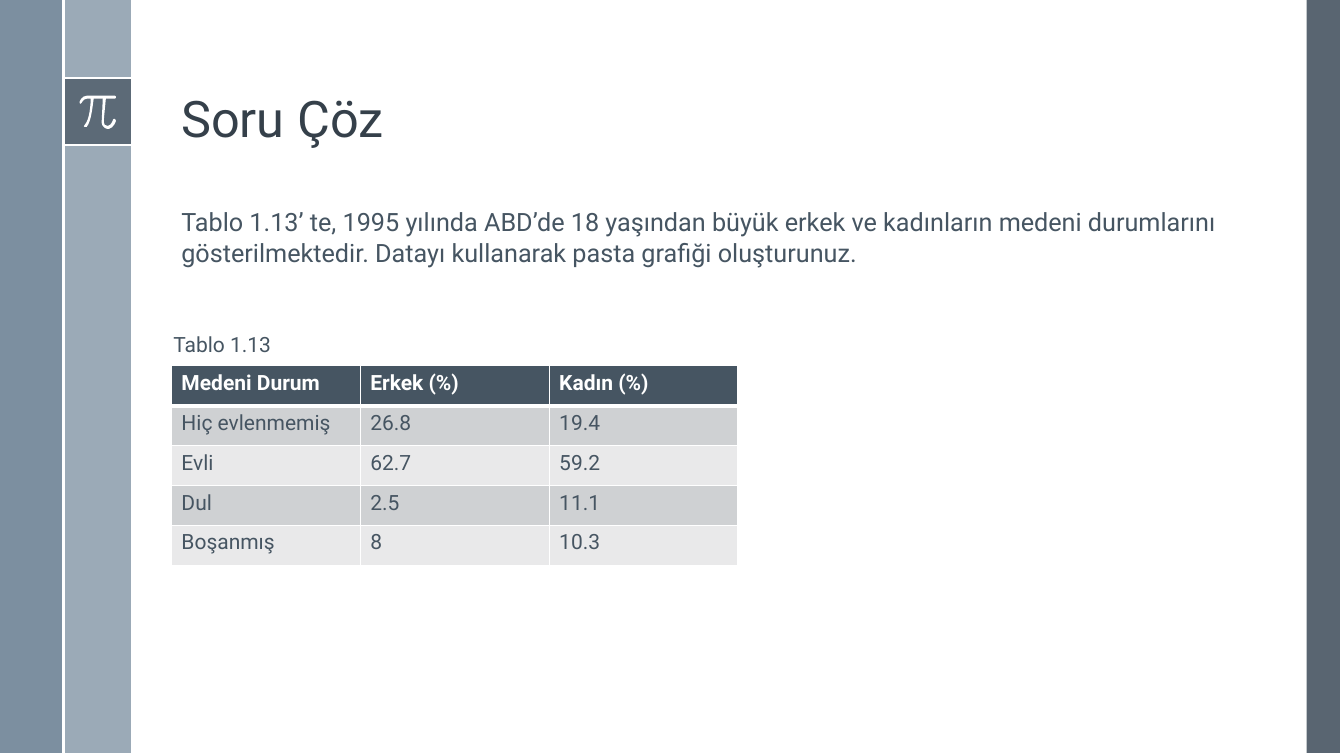
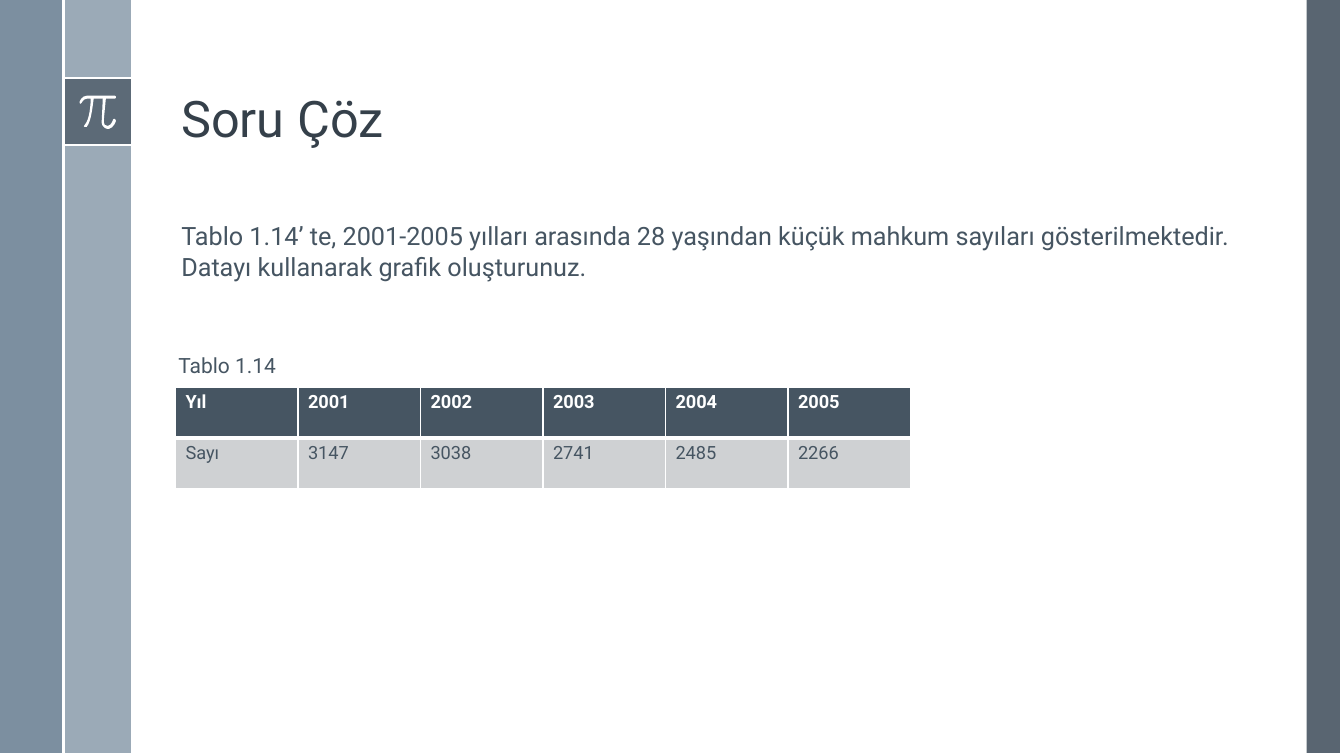
import pptx
import pptx.util
import pptx.dml.color
import pptx.enum.shapes
import pptx.enum.text
import pptx.oxml
import pptx.oxml.ns

Inches = pptx.util.Inches
Pt = pptx.util.Pt

COLORS = {
    "white": "FFFFFF",
    "title": "35404A",
    "text": "465562",
    "dark": "475562",
    "light_band": "9BAAB7",
    "blue_band": "6A8093",
    "odd_row": "CFD1D3",
    "even_row": "E9E9EA",
}
FONT = "Roboto"
NS = pptx.oxml.ns.nsdecls("a")
TOP, HEIGHT = -0.03, 7.5
BAND_X, BAND_W = 0.63, 0.67
BADGE_Y = 0.77

# Pi outline in hundredths of an inch: 2 numbers = line, 6 = Bezier curve
PI_START = (35, 0)
PI_PATH = [
    (7, 0), (2, 0, 0, 6, 0, 6), (0, 7, 0, 8, 1, 8), (2, 8, 2, 7, 2, 7),
    (2, 7, 4, 3, 7, 3), (11, 3), (11, 8, 10, 24, 5, 29),
    (4, 30, 4, 31, 5, 31), (7, 31), (12, 25, 13, 8, 14, 3), (23, 3),
    (22, 24), (22, 24, 21, 29, 24, 31), (25, 32, 26, 33, 28, 33), (29, 33),
    (34, 32, 36, 25, 36, 25), (36, 24, 35, 23, 35, 23),
    (34, 23, 33, 23, 33, 24), (33, 24, 32, 29, 28, 30),
    (27, 30, 26, 30, 25, 29), (24, 28, 24, 25, 24, 24), (26, 3), (35, 3),
    (36, 3, 36, 3, 36, 2), (36, 1, 36, 0, 35, 0),
]


def rgb(name):
    return pptx.dml.color.RGBColor.from_string(COLORS[name])


def set_fill(sp, color, alpha=100):
    sp.shadow.inherit = False
    sp.fill.solid()
    sp.fill.fore_color.rgb = rgb(color)
    sp.line.fill.background()
    if alpha < 100:
        clr = sp._element.spPr.find(".//" + pptx.oxml.ns.qn("a:srgbClr"))
        clr.append(pptx.oxml.parse_xml(f'<a:alpha {NS} val="{alpha * 1000}"/>'))


def add_band(s, x, y, w, h, color, alpha=100):
    sp = s.shapes.add_shape(pptx.enum.shapes.MSO_SHAPE.RECTANGLE,
                            Inches(x), Inches(y), Inches(w), Inches(h))
    set_fill(sp, color, alpha)


def add_rule(s, x1, y1, x2, y2):
    line = s.shapes.add_connector(pptx.enum.shapes.MSO_CONNECTOR.STRAIGHT,
                                  Inches(x1), Inches(y1), Inches(x2), Inches(y2))
    line.line.color.rgb = rgb("white")
    line.line.width = Pt(1.5)
    line._element.spPr.append(pptx.oxml.parse_xml(f'<a:effectLst {NS}/>'))


def add_pi(s, x, y):
    ends = [(Inches(x + px / 100), Inches(y + py / 100))
            for *_, px, py in [PI_START] + PI_PATH]
    builder = s.shapes.build_freeform(*ends[0])
    builder.add_line_segments(ends[1:], close=True)
    sp = builder.convert_to_shape()
    set_fill(sp, "white")
    # Bend the segments that are curves
    segments = list(sp._element.iter(pptx.oxml.ns.qn("a:lnTo")))
    for segment, step in zip(segments, PI_PATH):
        if len(step) == 6:
            pts = "".join(f'<a:pt x="{Inches(px / 100)}" y="{Inches(py / 100)}"/>'
                          for px, py in zip(step[::2], step[1::2]))
            segment.getparent().replace(segment, pptx.oxml.parse_xml(
                f'<a:cubicBezTo {NS}>{pts}</a:cubicBezTo>'))


def style(p, size, color, bold=False):
    p.font.name = FONT
    p.font.size = Pt(size)
    p.font.bold = bold
    p.font.color.rgb = rgb(color)


def add_text(s, x, y, w, h, text, size, color="text"):
    tf = s.shapes.add_textbox(Inches(x), Inches(y), Inches(w), Inches(h)).text_frame
    tf.word_wrap = True
    p = tf.paragraphs[0]
    p.text = text
    style(p, size, color)
    return tf


def add_frame(s):
    # Side bands
    add_band(s, 12.96, TOP, 0.33, HEIGHT, "dark", 90)
    add_band(s, BAND_X, TOP, BAND_W, HEIGHT, "light_band")
    add_band(s, -0.04, TOP, BAND_W, HEIGHT, "blue_band", 88)
    # Badge with the pi sign
    add_band(s, BAND_X, BADGE_Y, BAND_W, BAND_W, "dark", 75)
    for y in (BADGE_Y, BADGE_Y + BAND_W):
        add_rule(s, BAND_X, y, BAND_X + BAND_W, y)
    add_pi(s, BAND_X + 0.16, BADGE_Y + 0.18)
    add_rule(s, BAND_X, TOP, BAND_X, TOP + HEIGHT)


def add_title(s, text):
    tf = add_text(s, 1.7, 0.16, 10.7, 1.36, text, 36, "title")
    tf.vertical_anchor = pptx.enum.text.MSO_ANCHOR.BOTTOM
    tf.paragraphs[0].line_spacing = 0.9


def set_borders(cell, top, bottom):
    tcPr = cell._tc.get_or_add_tcPr()
    for side, width in (("L", 1), ("R", 1), ("T", top), ("B", bottom)):
        tcPr.append(pptx.oxml.parse_xml(
            f'<a:ln{side} {NS} w="{Pt(width)}"><a:solidFill>'
            f'<a:srgbClr val="{COLORS["white"]}"/></a:solidFill></a:ln{side}>'))


def add_data_table(s, x, y, w, h, rows, size):
    n_rows, n_cols = len(rows), len(rows[0])
    table = s.shapes.add_table(n_rows, n_cols, Inches(x), Inches(y),
                               Inches(w), Inches(h)).table
    for col in table.columns:
        col.width = Inches(w / n_cols)
    for i, values in enumerate(rows):
        table.rows[i].height = Inches(h / n_rows)
        header = i == 0
        fill = "text" if header else ("odd_row" if i % 2 else "even_row")
        for j, value in enumerate(values):
            cell = table.cell(i, j)
            set_borders(cell, 3 if i == 1 else 1, 3 if header else 1)
            cell.fill.solid()
            cell.fill.fore_color.rgb = rgb(fill)
            cell.text = value
            style(cell.text_frame.paragraphs[0], size,
                  "white" if header else "text", header)


def add_question_slide(prs, question, question_y, caption, caption_at, table):
    s = prs.slides.add_slide(prs.slide_layouts[6])
    add_frame(s)
    add_title(s, "Soru Çöz")
    add_data_table(s, **table)
    add_text(s, 1.7, question_y, 10.7, 0.71, question, 18)
    add_text(s, *caption_at, 5.62, 0.35, caption, 15)


def main():
    prs = pptx.Presentation()
    prs.slide_width, prs.slide_height = Inches(13.33), Inches(7.5)

    # Marital status
    add_question_slide(
        prs,
        "Tablo 1.13’ te, 1995 yılında ABD’de 18 yaşından büyük erkek ve kadınların "
        "medeni durumlarını gösterilmektedir. Datayı kullanarak pasta grafiği oluşturunuz.",
        2, "Tablo 1.13", (1.62, 3.24),
        dict(x=1.7, y=3.63, w=5.62, h=1.98, size=15, rows=[
            ("Medeni Durum", "Erkek (%)", "Kadın (%)"),
            ("Hiç evlenmemiş", "26.8", "19.4"),
            ("Evli", "62.7", "59.2"),
            ("Dul", "2.5", "11.1"),
            ("Boşanmış", "8", "10.3"),
        ]))

    # Convicts by year
    add_question_slide(
        prs,
        "Tablo 1.14’ te, 2001-2005 yılları arasında 28 yaşından küçük mahkum sayıları "
        "gösterilmektedir. Datayı kullanarak grafik oluşturunuz.",
        2.14, "Tablo 1.14", (1.67, 3.45),
        dict(x=1.74, y=3.84, w=7.29, h=1.01, size=13, rows=[
            ("Yıl", "2001", "2002", "2003", "2004", "2005"),
            ("Sayı", "3147", "3038", "2741", "2485", "2266"),
        ]))

    prs.save("out.pptx")


if __name__ == "__main__":
    main()
